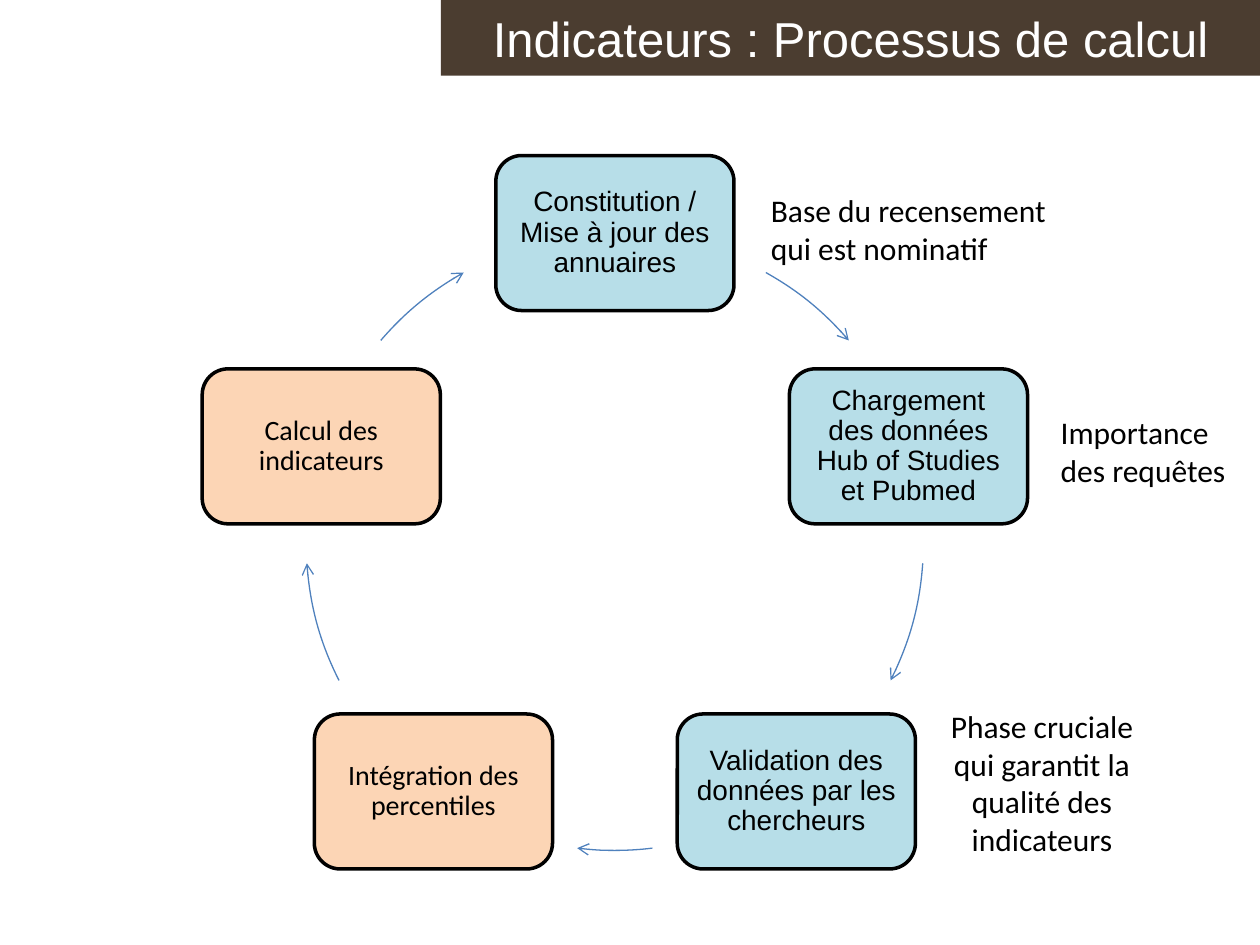
from math import cos, radians, sin

from pptx import Presentation
from pptx.dml.color import RGBColor
from pptx.enum.shapes import MSO_SHAPE as Shape
from pptx.enum.text import MSO_ANCHOR as Anchor, PP_ALIGN as Align
from pptx.oxml.ns import qn
from pptx.util import Inches, Pt
from lxml.etree import SubElement

THEME = {
    "banner": "4B3D30", "white": "FFFFFF", "black": "000000",
    "blue": "B7DEE8", "orange": "FCD5B5", "arrow": "4F81BD",
    "title_size": 28, "step_size": 16, "note_size": 18,
}

deck = Presentation()
deck.slide_width, deck.slide_height = Inches(10), Inches(7.5)
page = deck.slides.add_slide(deck.slide_layouts[6])

# Grid of 100 columns by 75 rows
COLUMN = deck.slide_width / 100
ROW = deck.slide_height / 75


def place(column, row, columns, rows):
    return (round(column * COLUMN), round(row * ROW),
            round(columns * COLUMN), round(rows * ROW))


def write(shape, text, font, size, color, align, anchor):
    frame = shape.text_frame
    frame.word_wrap = True
    frame.vertical_anchor = anchor
    frame.text = text
    para = frame.paragraphs[0]
    para.alignment = align
    span = para.runs[0].font
    span.name, span.size = font, Pt(THEME[size])
    span.color.rgb = RGBColor.from_string(THEME[color])
    return para


# Title banner
banner = page.shapes.add_shape(Shape.RECTANGLE, *place(35, 0, 65, 6))
banner.shadow.inherit = False
banner.fill.solid()
banner.fill.fore_color.rgb = RGBColor.from_string(THEME["banner"])
banner.line.fill.background()
write(banner, "Indicateurs : Processus de calcul", "Arial", "title_size",
      "white", Align.CENTER, Anchor.MIDDLE)

# Cycle: steps spaced evenly on a circle, each followed by an arc
center_x, center_y, radius = 48.8, 43, 24.5
box_width, box_height = 18.9, 12.3
steps = [
    # text, fill, font, start and end of the next arc in degrees
    ("Constitution / Mise à jour des annuaires", "blue", "Arial", 299.3, 319.3),
    ("Chargement des données Hub of Studies et Pubmed", "blue", "Arial", 4, 26.7),
    ("Validation des données par les chercheurs", "blue", "Arial", 83, 97),
    ("Intégration des percentiles", "orange", "Calibri", 153.3, 176),
    ("Calcul des indicateurs", "orange", "Calibri", 220.7, 240.7),
]
for index, (text, fill, font, start, end) in enumerate(steps):
    angle = radians(360 / len(steps) * index - 90)
    left = center_x + radius * cos(angle) - box_width / 2
    top = center_y + radius * sin(angle) - box_height / 2
    box = page.shapes.add_shape(Shape.ROUNDED_RECTANGLE,
                                *place(left, top, box_width, box_height))
    box.shadow.inherit = False
    box.fill.solid()
    box.fill.fore_color.rgb = RGBColor.from_string(THEME[fill])
    box.line.color.rgb = RGBColor.from_string(THEME["black"])
    box.line.width = Pt(2)
    frame = box.text_frame
    frame.margin_left = frame.margin_right = Inches(0.07)
    frame.margin_top = frame.margin_bottom = Inches(0.07)
    para = write(box, text, font, "step_size", "black", Align.CENTER, Anchor.MIDDLE)
    para.line_spacing = 0.9

    arc = page.shapes.add_shape(Shape.ARC, *place(
        center_x - radius, center_y - radius, 2 * radius, 2 * radius))
    # Arc angles are stored in 1/60000 degree, adjustments in 1/100000
    arc.adjustments[0], arc.adjustments[1] = start * 0.6, end * 0.6
    arc.shadow.inherit = False
    arc.fill.background()
    arc.line.color.rgb = RGBColor.from_string(THEME["arrow"])
    arc.line.width = Pt(0.75)
    SubElement(arc.line._get_or_add_ln(), qn("a:tailEnd"), type="arrow")

# Notes beside the steps
notes = [
    ("Base du recensement qui est nominatif", (60.2, 14.7, 24.4, 7.1), Align.LEFT),
    ("Importance des requêtes", (83.2, 32.3, 16.6, 7.1), Align.LEFT),
    ("Phase cruciale qui garantit la qualité des indicateurs",
     (74.4, 55.6, 16.6, 13.1), Align.CENTER),
]
for text, area, align in notes:
    note = page.shapes.add_textbox(*place(*area))
    write(note, text, "Calibri", "note_size", "black", align, Anchor.TOP)

deck.save("out.pptx")
